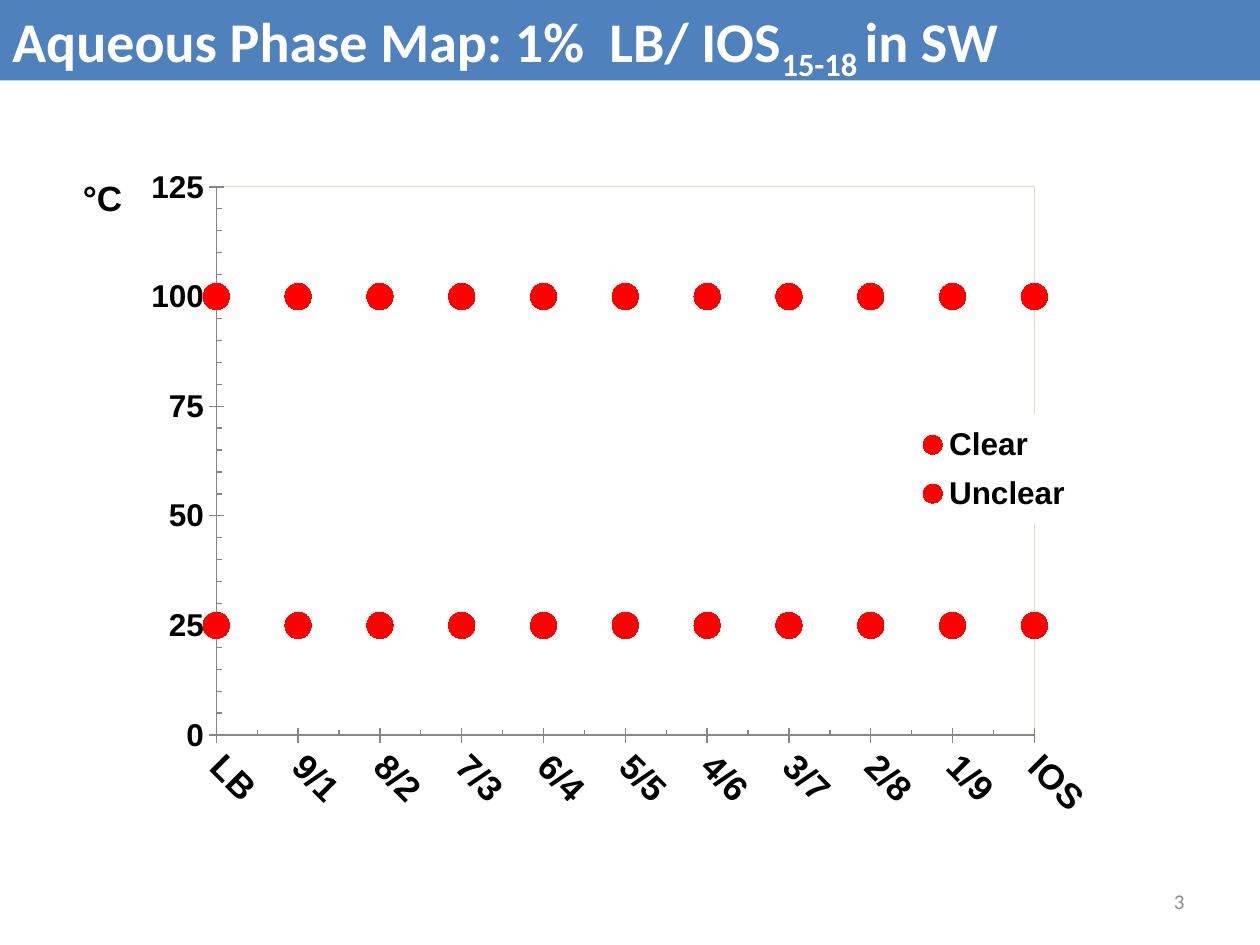
from dataclasses import dataclass

from lxml import etree
from pptx import Presentation
from pptx import util as u
from pptx.chart.data import CategoryChartData
from pptx.dml.color import RGBColor
from pptx.enum import chart as ch, shapes, text
from pptx.oxml.ns import qn


@dataclass
class Theme:
    head: str = "Calibri"
    body: str = "Arial"
    bar: str = "4F81BD"
    white: str = "FFFFFF"
    black: str = "000000"
    gray: str = "8C8C8C"
    axis: str = "868686"
    frame: str = "D7DFBE"
    dot: str = "FF0000"
    title: int = 32
    label: int = 20
    tick: int = 18
    base: int = 10
    note: int = 12
    mark: int = 15


def rgb(code):
    return RGBColor.from_string(code)


def add(host, tag, at=None, **attrs):
    """Put a new child into host, last or at the given index."""
    item = etree.Element(qn(tag), attrs)
    host.insert(len(host) if at is None else at, item)
    return item


def place(host, at, box, inner=False):
    """Set a manual layout, in shares of the chart."""
    for old in host.findall(qn("c:layout")):
        host.remove(old)
    man = add(add(host, "c:layout", at), "c:manualLayout")
    if inner:
        add(man, "c:layoutTarget", val="inner")
    for key in "xy":
        add(man, f"c:{key}Mode", val="edge")
    for key, val in zip("xywh", box):
        add(man, f"c:{key}", val=str(val))


def paint(host, at, fill=None, line=None):
    """Give a chart part a plain fill and outline."""
    props = add(host, "c:spPr", at)
    for spot, code in ((props, fill), (add(props, "a:ln"), line)):
        if code:
            tint = add(spot, "a:solidFill", 0)
            add(tint, "a:srgbClr", val=code)
        else:
            add(spot, "a:noFill", 0)


class Deck:
    def __init__(self, theme):
        self.look = theme
        self.prs = Presentation()
        self.prs.slide_width, self.prs.slide_height = u.Inches(10), u.Inches(7.5)
        self.slide = self.prs.slides.add_slide(self.prs.slide_layouts[6])

    def area(self, x, y, w, h):
        """Turn shares of the slide into lengths."""
        wide, high = self.prs.slide_width, self.prs.slide_height
        return [int(v) for v in (x * wide, y * high, w * wide, h * high)]

    def font(self, font, size, color, bold=False, face=None):
        font.name, font.size, font.bold = face or self.look.body, u.Pt(size), bold
        font.color.rgb = rgb(color)

    def run(self, para, words, size, color, bold=False):
        run = para.add_run()
        run.text = words
        self.font(run.font, size, color, bold, self.look.head)
        return run

    def banner(self, box, parts):
        """Draw the title bar; parts are (words, baseline shift) pairs."""
        bar = self.slide.shapes.add_shape(shapes.MSO_SHAPE.RECTANGLE, *self.area(*box))
        bar.shadow.inherit = False
        bar.fill.solid()
        bar.fill.fore_color.rgb = rgb(self.look.bar)
        bar.line.fill.background()
        frame = bar.text_frame
        frame.word_wrap = True
        frame.auto_size = text.MSO_AUTO_SIZE.SHAPE_TO_FIT_TEXT
        frame.vertical_anchor = text.MSO_ANCHOR.TOP
        para = frame.paragraphs[0]
        para.alignment = text.PP_ALIGN.LEFT
        for words, shift in parts:
            run = self.run(para, words, self.look.title, self.look.white, True)
            if shift:
                run.font._element.set("baseline", str(shift * 1000))

    def number(self, box, words):
        frame = self.slide.shapes.add_textbox(*self.area(*box)).text_frame
        frame.word_wrap = True
        frame.vertical_anchor = text.MSO_ANCHOR.MIDDLE
        para = frame.paragraphs[0]
        para.alignment = text.PP_ALIGN.RIGHT
        self.run(para, words, self.look.note, self.look.gray)

    def map(self, box, cats, rows, hidden):
        """Draw a marker-only line chart; hidden rows stay out of the legend."""
        data = CategoryChartData()
        data.categories = cats
        for name, vals in rows:
            data.add_series(name, vals)
        chart = self.slide.shapes.add_chart(
            ch.XL_CHART_TYPE.LINE_MARKERS, *self.area(*box), data).chart
        chart.has_title = False
        self.font(chart.font, self.look.base, self.look.black)
        chart.plots[0].vary_by_categories = False
        for row in chart.plots[0].series:
            row.smooth = False
            row.format.line.fill.background()
            mark = row.marker
            mark.style, mark.size = ch.XL_MARKER_STYLE.CIRCLE, self.look.mark
            mark.format.fill.solid()
            mark.format.fill.fore_color.rgb = rgb(self.look.dot)
            mark.format.line.fill.background()
        self.axes(chart)
        self.legend(chart, hidden)
        plot = chart._chartSpace.chart.plotArea
        place(plot, 0, (0.138, 0.084, 0.749, 0.74), inner=True)
        paint(plot, None, line=self.look.frame)

    def axes(self, chart):
        cat, val = chart.category_axis, chart.value_axis
        for axis, size in ((cat, self.look.label), (val, self.look.tick)):
            axis.has_major_gridlines = False
            axis.major_tick_mark = ch.XL_TICK_MARK.CROSS
            axis.minor_tick_mark = ch.XL_TICK_MARK.INSIDE
            axis.format.line.color.rgb = rgb(self.look.axis)
            self.font(axis.tick_labels.font, size, self.look.black, True)
        turn = cat._element.find(qn("c:txPr")).find(qn("a:bodyPr"))
        turn.set("rot", str(45 * 60000))
        val.minimum_scale, val.maximum_scale = 0, 125
        val.major_unit, val.minor_unit = 25, 5
        cross = val._element.find(qn("c:crossBetween"))
        if cross is None:
            cross = add(val._element, "c:crossBetween",
                        val._element.index(val._element.find(qn("c:majorUnit"))))
        cross.set("val", "midCat")
        title = val.axis_title
        run = title.text_frame.paragraphs[0].add_run()
        run.text = "°C"
        self.font(run.font, self.look.label, self.look.black, True)
        flat = title.text_frame._txBody.find(qn("a:bodyPr"))
        flat.set("rot", "0")
        flat.set("vert", "horz")
        place(title._element, 1, (0.01, 0.06))

    def legend(self, chart, hidden):
        chart.has_legend = True
        key = chart.legend
        key.position = ch.XL_LEGEND_POSITION.RIGHT
        key.include_in_layout = False
        self.font(key.font, self.look.tick, self.look.black, True)
        node = key._element
        for spot, row in enumerate(hidden, 1):
            entry = add(node, "c:legendEntry", spot)
            add(entry, "c:idx", val=str(row))
            add(entry, "c:delete", val="1")
        place(node, 1 + len(hidden), (0.76, 0.39, 0.18, 0.15))
        paint(node, node.index(node.find(qn("c:txPr"))), fill=self.look.white)


def main():
    deck = Deck(Theme())
    deck.number((0.717, 0.927, 0.233, 0.053), "3")
    deck.banner((0, 0, 1, 0.085), [
        ("Aqueous Phase Map: 1%  LB/ IOS", 0), ("15-18 ", -25), ("in SW", 0)])
    cats = ["LB", *(f"{10 - n}/{n}" for n in range(1, 10)), "IOS"]
    rows = [
        ("Clear", [25] * 3),
        ("Series 2", [100] * 2),
        ("Unclear", [None] * 2 + [100] * 9),
        ("Series 4", [None] * 3 + [25] * 8),
    ]
    deck.map((0.052, 0.132, 0.867, 0.784), cats, rows, hidden=(1, 3))
    deck.prs.save("out.pptx")


if __name__ == "__main__":
    main()
